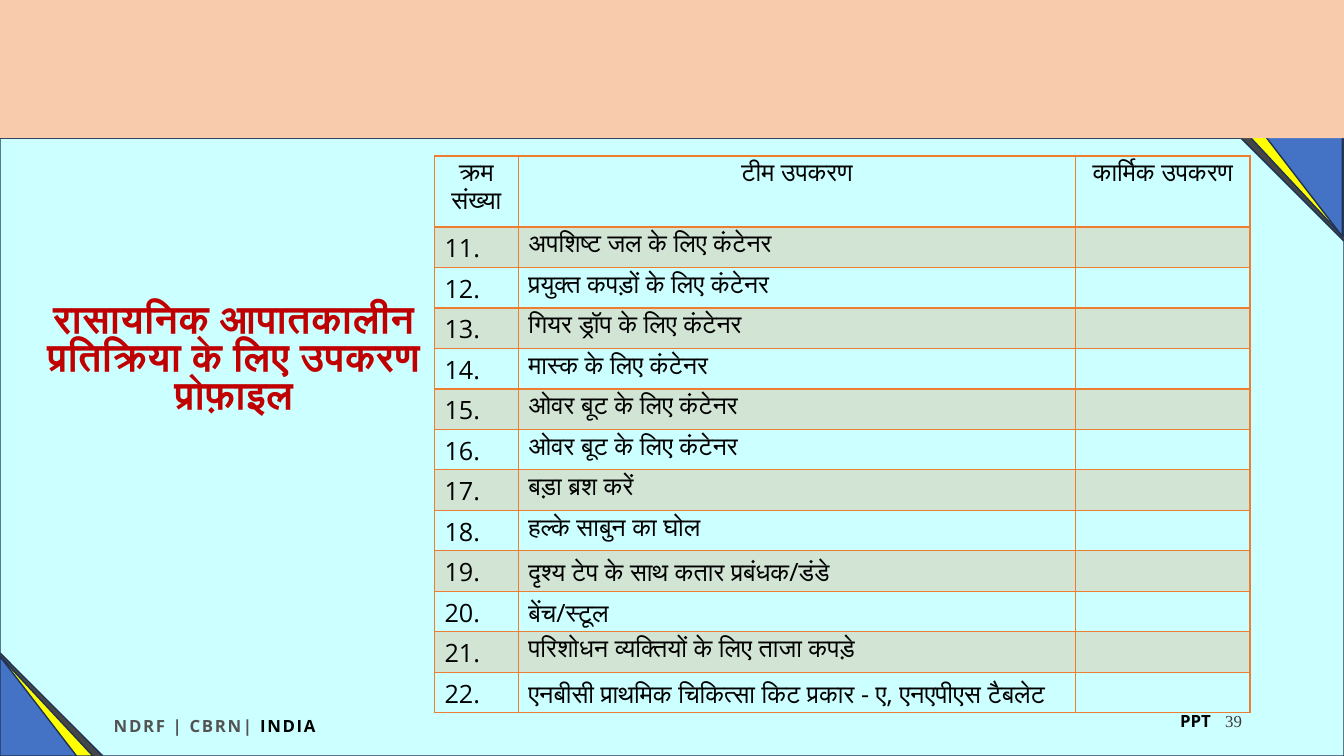
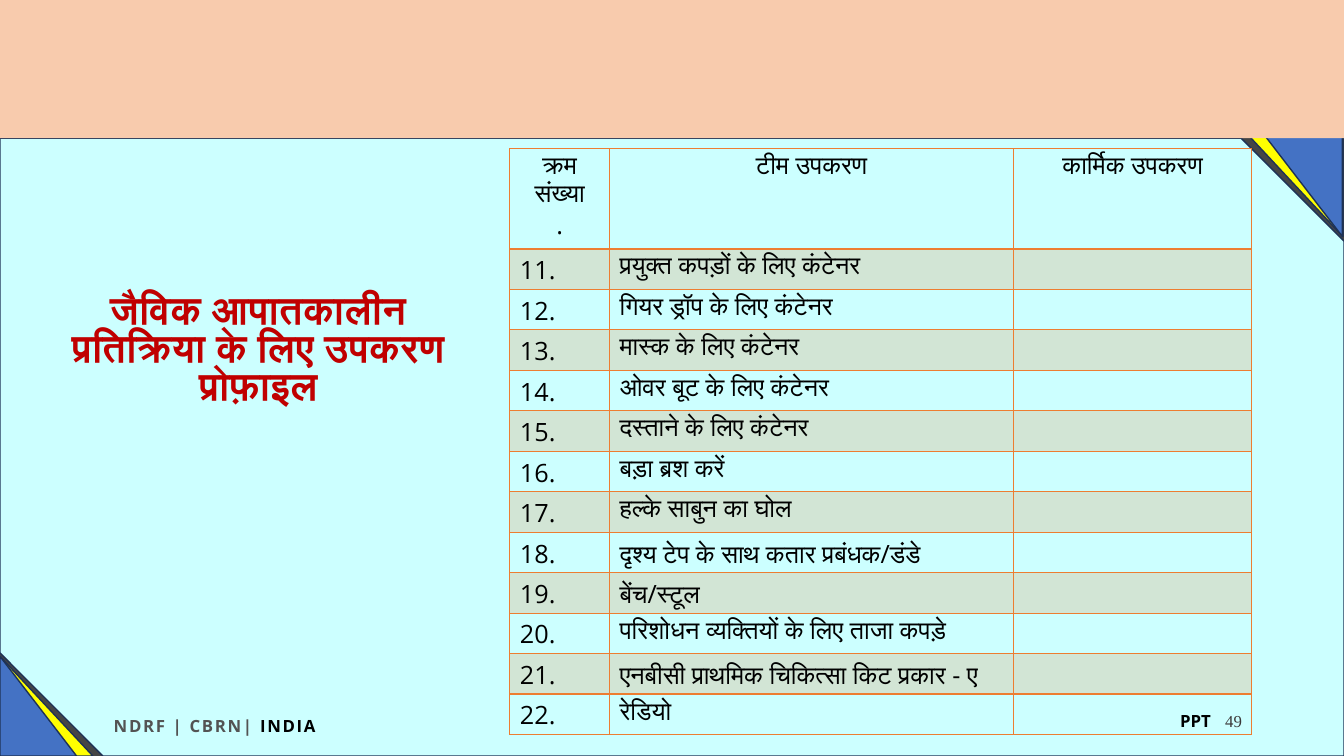
from lxml import etree
from pptx import Presentation
from pptx.dml.color import RGBColor
from pptx.enum.shapes import MSO_SHAPE
from pptx.enum.text import MSO_ANCHOR, MSO_AUTO_SIZE, PP_ALIGN
from pptx.oxml.ns import qn
from pptx.util import Cm, Pt

TRIANGLE, SNIPPED, RECTANGLE = MSO_SHAPE.RIGHT_TRIANGLE, MSO_SHAPE.SNIP_2_DIAG_RECTANGLE, MSO_SHAPE.RECTANGLE
LEFT, CENTER, RIGHT = PP_ALIGN.LEFT, PP_ALIGN.CENTER, PP_ALIGN.RIGHT
TOP, MIDDLE = MSO_ANCHOR.TOP, MSO_ANCHOR.MIDDLE
FIXED = MSO_AUTO_SIZE.NONE

COLORS = {
    "background": "454545", "yellow": "FFFF00", "blue": "4472C4", "outline": "1E3256",
    "panel": "CCFFFF", "band": "F8CBAD", "title": "C00000", "text": "000000",
    "organisation": "535353", "page": "3B3838", "grid": "ED7D31",
}
SANS, SERIF = "Open Sans", "Times New Roman"
TITLE_FONT = {"name": SANS, "size": Pt(28), "bold": True}
TABLE_FONT = {"name": SANS, "size": Pt(18), "bold": False}
FOOTER_FONT = {"name": SANS, "size": Pt(12), "bold": True}
PAGE_FONT = {"name": SERIF, "size": Pt(12), "bold": False}
TIGHT = 0.8

DECORATIONS = [
    (TRIANGLE, (0, 16.54, 2.34, 2.51), 0, "yellow", "outline"),
    (TRIANGLE, (0, 16.54, 1.93, 2.51), 0, "blue", "outline"),
    (TRIANGLE, (31.5, 3.45, 2.34, 2.51), 180, "yellow", "outline"),
    (TRIANGLE, (31.9, 3.45, 1.93, 2.51), 180, "blue", "outline"),
    (SNIPPED, (0, 3.48, 33.87, 15.57), 0, "panel", "outline"),
    (RECTANGLE, (0, 0, 33.87, 3.48), 0, "band", None),
]
FIRST_NUMBER = 11
ROW_HEIGHT = 1.02
PROFILES = [
    {
        "title": "रासायनिक आपातकालीन प्रतिक्रिया के लिए उपकरण प्रोफ़ाइल",
        "title_box": (0.43, 7.24, 10.92, 3.68),
        "page": "39",
        "corner": (10.95, 3.93),
        "columns": (2.11, 14.05, 4.39),
        "header_height": 1.79,
        "headings": ("क्रम संख्या", "टीम उपकरण", "कार्मिक उपकरण"),
        "equipment": [
            "अपशिष्ट जल के लिए कंटेनर",
            "प्रयुक्त कपड़ों के लिए कंटेनर",
            "गियर ड्रॉप के लिए कंटेनर",
            "मास्क के लिए कंटेनर",
            "ओवर बूट के लिए कंटेनर",
            "ओवर बूट के लिए कंटेनर",
            "बड़ा ब्रश करें",
            "हल्के साबुन का घोल",
            "दृश्य टेप के साथ कतार प्रबंधक/डंडे",
            "बेंच/स्टूल",
            "परिशोधन व्यक्तियों के लिए ताजा कपड़े",
            "एनबीसी प्राथमिक चिकित्सा किट प्रकार - ए, एनएपीएस टैबलेट",
        ],
    },
    {
        "title": "जैविक आपातकालीन प्रतिक्रिया के लिए उपकरण प्रोफ़ाइल",
        "title_box": (0.97, 7.01, 11.07, 3.68),
        "page": "49",
        "corner": (12.85, 3.75),
        "columns": (2.51, 10.19, 5.99),
        "header_height": 2.52,
        "headings": ("क्रम संख्या\n.", "टीम उपकरण", "कार्मिक उपकरण"),
        "equipment": [
            "प्रयुक्त कपड़ों के लिए कंटेनर",
            "गियर ड्रॉप के लिए कंटेनर",
            "मास्क के लिए कंटेनर",
            "ओवर बूट के लिए कंटेनर",
            "दस्ताने के लिए कंटेनर",
            "बड़ा ब्रश करें",
            "हल्के साबुन का घोल",
            "दृश्य टेप के साथ कतार प्रबंधक/डंडे",
            "बेंच/स्टूल",
            "परिशोधन व्यक्तियों के लिए ताजा कपड़े",
            "एनबीसी प्राथमिक चिकित्सा किट प्रकार - ए",
            "रेडियो",
        ],
    },
]


def rgb(color):
    """Return the named colour."""
    return RGBColor.from_string(COLORS[color])


def lengths(values):
    """Turn centimetres into lengths."""
    return [Cm(value) for value in values]


def add_run(paragraph, text, font_format, color, spacing=0):
    """Add a formatted run with one typeface for Latin and Indic text."""
    run = paragraph.add_run()
    run.text = text
    for name, value in font_format.items():
        setattr(run.font, name, value)
    run.font.color.rgb = rgb(color)
    properties = run.font._element
    etree.SubElement(properties, qn("a:cs"), typeface=font_format["name"])
    if spacing:
        properties.set("spc", str(spacing))


def add_decoration(slide, kind, box, rotation, fill, outline):
    """Add one flat shape of the backdrop."""
    shape = slide.shapes.add_shape(kind, *lengths(box))
    shape.rotation = rotation
    shape.shadow.inherit = False
    shape.fill.solid()
    shape.fill.fore_color.rgb = rgb(fill)
    if outline:
        shape.line.color.rgb = rgb(outline)
        shape.line.width = Pt(1)
    else:
        shape.line.fill.background()


def add_label(slide, box, runs, alignment=LEFT, anchor=TOP, margin=0.13):
    """Add a one-line footer text."""
    frame = slide.shapes.add_textbox(*lengths(box)).text_frame
    frame_format = {"word_wrap": True, "vertical_anchor": anchor,
                    "margin_top": Cm(margin), "margin_bottom": Cm(margin)}
    for name, value in frame_format.items():
        setattr(frame, name, value)
    paragraph = frame.paragraphs[0]
    paragraph.alignment = alignment
    for run in runs:
        add_run(paragraph, *run)


def add_backdrop(slide, page):
    """Add the corners, panel, band and footer."""
    for decoration in DECORATIONS:
        add_decoration(slide, *decoration)
    add_label(slide, (0, 17.81, 10.82, 0.94),
              [("NDRF | CBRN| ", FOOTER_FONT, "organisation", 120),
               ("INDIA", FOOTER_FONT, "text", 120)], CENTER, margin=0.23)
    add_label(slide, (29.49, 17.78, 2.39, 0.76), [("PPT", FOOTER_FONT, "text")])
    add_label(slide, (23.93, 17.65, 7.62, 1.02), [(page, PAGE_FONT, "page")], RIGHT, MIDDLE)


def set_title(slide, text, box):
    """Place the title above the backdrop."""
    title = slide.shapes.title
    slide.shapes.element.append(title.element)
    title.left, title.top, title.width, title.height = lengths(box)
    frame = title.text_frame
    frame_format = {"word_wrap": True, "auto_size": FIXED, "vertical_anchor": MIDDLE}
    for name, value in frame_format.items():
        setattr(frame, name, value)
    paragraph = frame.paragraphs[0]
    paragraph.alignment, paragraph.line_spacing = CENTER, TIGHT
    add_run(paragraph, text, TITLE_FONT, "title", 10)


def add_border(properties, side, width):
    """Add a solid border on one side of a cell."""
    border = etree.SubElement(properties, qn(f"a:{side}"), w=str(Pt(width)))
    fill = etree.SubElement(border, qn("a:solidFill"))
    etree.SubElement(fill, qn("a:srgbClr"), val=COLORS["grid"])


def format_cell(cell, row):
    """Set margins, borders and the translucent stripe of a cell."""
    cell.margin_top, cell.margin_bottom = Cm(0.1), Cm(0)
    properties = cell._tc.get_or_add_tcPr()
    for side in ("lnL", "lnR", "lnT", "lnB"):
        heading_edge = (row, side) in ((0, "lnB"), (1, "lnT"))
        add_border(properties, side, 2 if heading_edge else 1)
    if row % 2:
        cell.fill.solid()
        cell.fill.fore_color.rgb = rgb("grid")
        stripe = properties.find(qn("a:solidFill"))[0]
        etree.SubElement(stripe, qn("a:alpha"), val="20000")
    else:
        cell.fill.background()


def write_cell(cell, text, alignment):
    """Write cell lines, tightening those in pure Devanagari."""
    for index, line in enumerate(text.split("\n")):
        frame = cell.text_frame
        paragraph = frame.add_paragraph() if index else frame.paragraphs[0]
        paragraph.alignment = alignment
        paragraph.line_spacing = 1.0 if set(line) & set("/-.") else TIGHT
        if line:
            add_run(paragraph, line, TABLE_FONT, "text")


def add_equipment_table(slide, profile):
    """Add the numbered equipment table."""
    items = enumerate(profile["equipment"], FIRST_NUMBER)
    rows = [profile["headings"]] + [(f"{number}.", item, "") for number, item in items]
    heights = [profile["header_height"]] + [ROW_HEIGHT] * len(profile["equipment"])
    columns = profile["columns"]
    size = lengths((sum(columns), sum(heights)))
    table = slide.shapes.add_table(len(rows), len(columns), *lengths(profile["corner"]), *size).table
    table.first_row = table.horz_banding = False
    for column, width in zip(table.columns, columns):
        column.width = Cm(width)
    for row, (texts, height) in enumerate(zip(rows, heights)):
        table.rows[row].height = Cm(height)
        for column, text in enumerate(texts):
            cell = table.cell(row, column)
            format_cell(cell, row)
            write_cell(cell, text, LEFT if row else CENTER)


def main():
    """Build and save the equipment profiles."""
    deck = Presentation()
    deck.slide_width, deck.slide_height = Cm(33.87), Cm(19.05)
    background = deck.slide_master.background.fill
    background.solid()
    background.fore_color.rgb = rgb("background")
    for profile in PROFILES:
        slide = deck.slides.add_slide(deck.slide_layouts[5])
        add_backdrop(slide, profile["page"])
        add_equipment_table(slide, profile)
        set_title(slide, profile["title"], profile["title_box"])
    deck.save("out.pptx")


if __name__ == "__main__":
    main()
